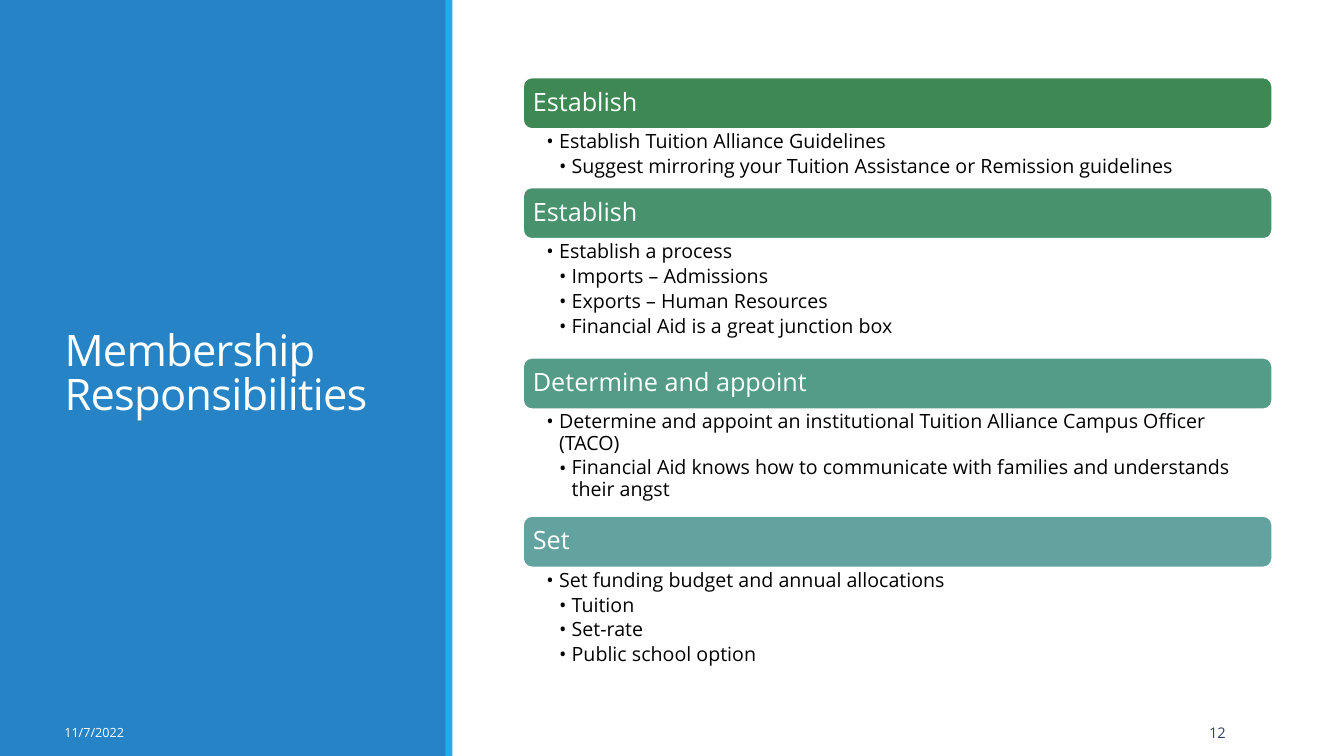
from lxml import etree
from pptx import Presentation
from pptx.dml.color import RGBColor
from pptx.enum.shapes import MSO_SHAPE
from pptx.enum.text import MSO_ANCHOR, MSO_AUTO_SIZE, PP_ALIGN
from pptx.oxml.ns import qn
from pptx.util import Pt

RECT, ROUNDED = MSO_SHAPE.RECTANGLE, MSO_SHAPE.ROUNDED_RECTANGLE
TOP, MIDDLE = MSO_ANCHOR.TOP, MSO_ANCHOR.MIDDLE
LEFT, RIGHT = PP_ALIGN.LEFT, PP_ALIGN.RIGHT
FIXED = MSO_AUTO_SIZE.NONE
FONT = "Open Sans"
WHITE, BLACK, BLUE, CYAN, NAVY = "FFFFFF", "000000", "2683C6", "1CADE4", "344068"
TITLE_ONLY = 5

LIST_LEFT, LIST_TOP, LIST_WIDTH, BANNER_HEIGHT = 373.7, 55.4, 535, 36.7
BULLET_STEP = 9
BANNER_INSETS = (5.2, 5, 5.2, 5)
BODY_INSETS = (16.7, 2, 10, 2)
DEFAULT_INSETS = (7.2, 3.6, 7.2, 3.6)

SECTIONS = [
    ("Establish", "3E8853", 41.8, [
        "Establish Tuition Alliance Guidelines",
        "Suggest mirroring your Tuition Assistance or Remission guidelines"]),
    ("Establish", "49926E", 85, [
        "Establish a process",
        "Imports – Admissions",
        "Exports – Human Resources",
        "Financial Aid is a great junction box"]),
    ("Determine and appoint", "549C88", 76.3, [
        "Determine and appoint an institutional Tuition Alliance Campus Officer (TACO)",
        "Financial Aid knows how to communicate with families and understands their angst"]),
    ("Set", "62A39F", 85, [
        "Set funding budget and annual allocations",
        "Tuition",
        "Set-rate",
        "Public school option"]),
]


def rgb(value):
    """Return the colour for a hex string."""
    return RGBColor.from_string(value)


def apply(target, formats):
    """Set each attribute named in a dict of format values."""
    for name, value in formats.items():
        setattr(target, name, value)


def format_frame(tf, anchor, insets=DEFAULT_INSETS):
    """Set wrapping, anchor and insets of a text frame."""
    left, top, right, bottom = map(Pt, insets)
    apply(tf, {"word_wrap": True, "auto_size": FIXED, "vertical_anchor": anchor,
               "margin_left": left, "margin_top": top,
               "margin_right": right, "margin_bottom": bottom})


def write(p, text, size, color, **formats):
    """Fill a paragraph with one formatted run and return the run."""
    apply(p, {"alignment": LEFT, **formats})
    r = p.add_run()
    r.text = text
    apply(r.font, {"name": FONT, "size": Pt(size)})
    r.font.color.rgb = rgb(color)
    return r


def add_block(s, kind, box, fill, line=None):
    """Add a filled shape, outlined only if a line colour is given."""
    sp = s.shapes.add_shape(kind, *map(Pt, box))
    sp.shadow.inherit = False
    sp.fill.solid()
    sp.fill.fore_color.rgb = rgb(fill)
    if line:
        sp.line.color.rgb = rgb(line)
        sp.line.width = Pt(1.25)
    else:
        sp.line.fill.background()
    return sp


def add_text(s, box, anchor, insets=DEFAULT_INSETS):
    """Add a text box and return its text frame."""
    tf = s.shapes.add_textbox(*map(Pt, box)).text_frame
    format_frame(tf, anchor, insets)
    return tf


def add_bullet(p, level):
    """Give a paragraph a hanging bullet at its level."""
    pPr = p._p.get_or_add_pPr()
    pPr.set("marL", str(Pt(BULLET_STEP * level)))
    pPr.set("indent", str(-Pt(BULLET_STEP)))
    etree.SubElement(pPr, qn("a:buFont")).set("typeface", FONT)
    etree.SubElement(pPr, qn("a:buChar")).set("char", "•")


def add_section(s, top, heading, fill, body_height, items):
    """Add a banner with its bullets and return the bottom edge."""
    banner = add_block(s, ROUNDED, (LIST_LEFT, top, LIST_WIDTH, BANNER_HEIGHT), fill, WHITE)
    format_frame(banner.text_frame, MIDDLE, BANNER_INSETS)
    write(banner.text_frame.paragraphs[0], heading, 18, WHITE, line_spacing=0.9)
    top += BANNER_HEIGHT
    tf = add_text(s, (LIST_LEFT, top, LIST_WIDTH, body_height), TOP, BODY_INSETS)
    for i, item in enumerate(items):
        p = tf.add_paragraph() if i else tf.paragraphs[0]
        level = 2 if i else 1
        write(p, item, 14, BLACK, level=level, line_spacing=0.9, space_after=Pt(2.6))
        add_bullet(p, level)
    return top + body_height


def add_title(s, text):
    """Place and format the title placeholder."""
    title = s.shapes.title
    apply(title, dict(zip(("left", "top", "width", "height"), map(Pt, (38.9, 41, 242.6, 454.3)))))
    format_frame(title.text_frame, MIDDLE)
    r = write(title.text_frame.paragraphs[0], text, 31, WHITE, line_spacing=0.85)
    r.font._element.set("spc", "-50")
    return title


def main():
    """Build and save the slide."""
    prs = Presentation()
    apply(prs, {"slide_width": Pt(960), "slide_height": Pt(540)})
    s = prs.slides.add_slide(prs.slide_layouts[TITLE_ONLY])
    title = add_title(s, "Membership Responsibilities")
    panel = add_block(s, RECT, (0, 0, 319, 540), BLUE)
    title.element.addprevious(panel.element)
    add_block(s, RECT, (318.2, 0, 5, 540), CYAN)
    date = add_text(s, (38.9, 508.7, 136.8, 28.8), MIDDLE)
    write(date.paragraphs[0], "11/7/2022", 9, WHITE)
    number = add_text(s, (797, 508.7, 85.7, 28.8), MIDDLE)
    write(number.paragraphs[0], "12", 10.5, NAVY, alignment=RIGHT)
    top = LIST_TOP
    for section in SECTIONS:
        top = add_section(s, top, *section)
    prs.save("out.pptx")


if __name__ == "__main__":
    main()
